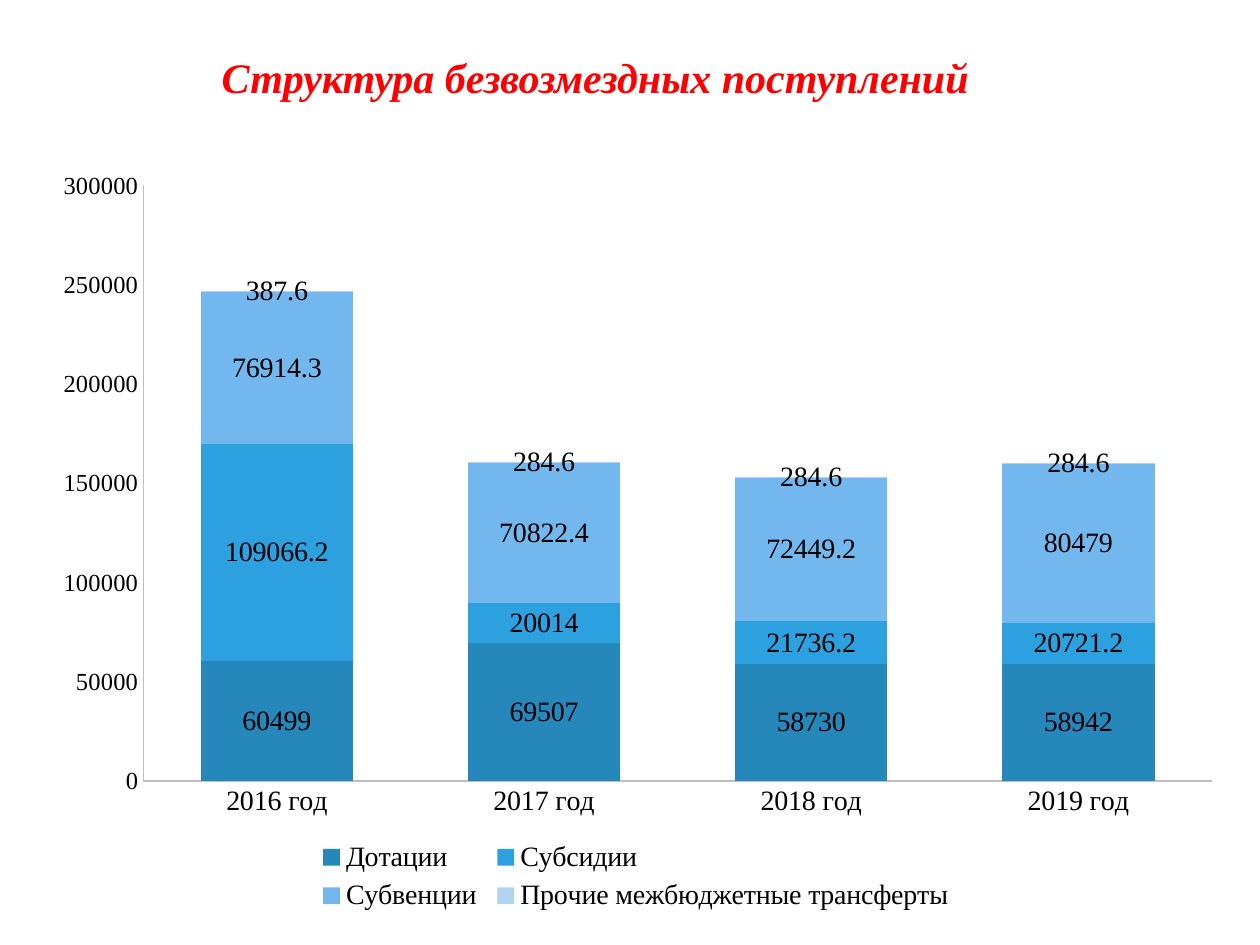
from lxml import etree
from pptx import Presentation
from pptx.chart.data import CategoryChartData
from pptx.dml.color import RGBColor
from pptx.enum.chart import (XL_CHART_TYPE, XL_LABEL_POSITION,
                             XL_LEGEND_POSITION, XL_TICK_MARK)
from pptx.enum.text import MSO_ANCHOR, PP_ALIGN
from pptx.oxml.ns import qn
from pptx.util import Inches, Pt

STACKED = XL_CHART_TYPE.COLUMN_STACKED
CENTER_LABEL = XL_LABEL_POSITION.CENTER
BOTTOM = XL_LEGEND_POSITION.BOTTOM
NO_TICK = XL_TICK_MARK.NONE
MIDDLE = MSO_ANCHOR.MIDDLE
CENTER = PP_ALIGN.CENTER

WIDTH, HEIGHT = Inches(10), Inches(7.5)
SERIF, SANS = "Times New Roman", "Cabin"
RED = RGBColor(0xFF, 0x00, 0x00)
BLACK = RGBColor(0x00, 0x00, 0x00)
AXIS_GREY = RGBColor(0xBF, 0xBF, 0xBF)

YEARS = ["2016 год", "2017 год", "2018 год", "2019 год"]
TRANSFERS = [
    ("Дотации", (60499, 69507, 58730, 58942), RGBColor(0x26, 0x87, 0xBB)),
    ("Субсидии", (109066.2, 20014, 21736.2, 20721.2), RGBColor(0x2D, 0xA0, 0xDF)),
    ("Субвенции", (76914.3, 70822.4, 72449.2, 80479), RGBColor(0x72, 0xB7, 0xED)),
    ("Прочие межбюджетные трансферты", (387.6, 284.6, 284.6, 284.6),
     RGBColor(0xB0, 0xD3, 0xF4)),
]


def place(left, top, width, height):
    """Turn inches into the four lengths of a frame."""
    return [Inches(length) for length in (left, top, width, height)]


def style_font(font, size, name=SERIF, color=BLACK):
    font.size = Pt(size)
    font.name = name
    font.color.rgb = color


def add_title(page, text):
    box = page.shapes.add_textbox(*place(0.51, 0.21, 8.43, 0.79))
    frame = box.text_frame
    frame.word_wrap = True
    frame.vertical_anchor = MIDDLE
    frame.text = text
    para = frame.paragraphs[0]
    para.alignment = CENTER
    font = para.runs[0].font
    style_font(font, 24, color=RED)
    font.bold = font.italic = True


def set_layout(parent, index, shares, inner=False):
    """Fix a chart part at x, y, w, h given as shares of the chart."""
    for old in parent.findall(qn("c:layout")):
        parent.remove(old)
    layout = etree.Element(qn("c:layout"))
    manual = etree.SubElement(layout, qn("c:manualLayout"))
    settings = [("layoutTarget", "inner")] if inner else []
    settings += [("xMode", "edge"), ("yMode", "edge"), *zip("xywh", shares)]
    for tag, value in settings:
        etree.SubElement(manual, qn(f"c:{tag}")).set("val", str(value))
    parent.insert(index, layout)


def style_axis(axis, size):
    axis.has_major_gridlines = False
    axis.major_tick_mark = axis.minor_tick_mark = NO_TICK
    axis.format.line.color.rgb = AXIS_GREY
    axis.format.line.width = Pt(0.75)
    style_font(axis.tick_labels.font, size)


def style_series(series, color):
    series.format.fill.solid()
    series.format.fill.fore_color.rgb = color
    series.invert_if_negative = False
    labels = series.data_labels
    labels.show_value = True
    labels.position = CENTER_LABEL
    style_font(labels.font, 16)


def add_legend(chart):
    chart.has_legend = True
    legend = chart.legend
    legend.position = BOTTOM
    legend.include_in_layout = False
    style_font(legend.font, 16)
    set_layout(legend._element, 1, (0.23, 0.89, 0.54, 0.11))


def add_transfers_chart(page):
    data = CategoryChartData()
    data.categories = YEARS
    for name, values, _ in TRANSFERS:
        data.add_series(name, values)
    chart = page.shapes.add_chart(STACKED, *place(0.28, 1.23, 9.53, 6.06), data).chart
    chart.has_title = False
    style_font(chart.font, 18, SANS)

    plot = chart.plots[0]
    plot.gap_width, plot.overlap = 75, 100
    plot.vary_by_categories = False
    for series, (_, _, color) in zip(plot.series, TRANSFERS):
        style_series(series, color)

    style_axis(chart.category_axis, 16)
    style_axis(chart.value_axis, 14)
    chart.value_axis.minimum_scale = 0
    chart.value_axis.maximum_scale = 300000
    chart.value_axis.major_unit = 50000
    add_legend(chart)
    plot_area = chart._chartSpace.find(".//" + qn("c:plotArea"))
    set_layout(plot_area, 0, (0.09, 0.04, 0.89, 0.78), inner=True)


def main():
    deck = Presentation()
    deck.slide_width, deck.slide_height = WIDTH, HEIGHT
    page = deck.slides.add_slide(deck.slide_layouts[6])
    add_title(page, "Структура безвозмездных поступлений")
    add_transfers_chart(page)
    deck.save("out.pptx")


if __name__ == "__main__":
    main()
